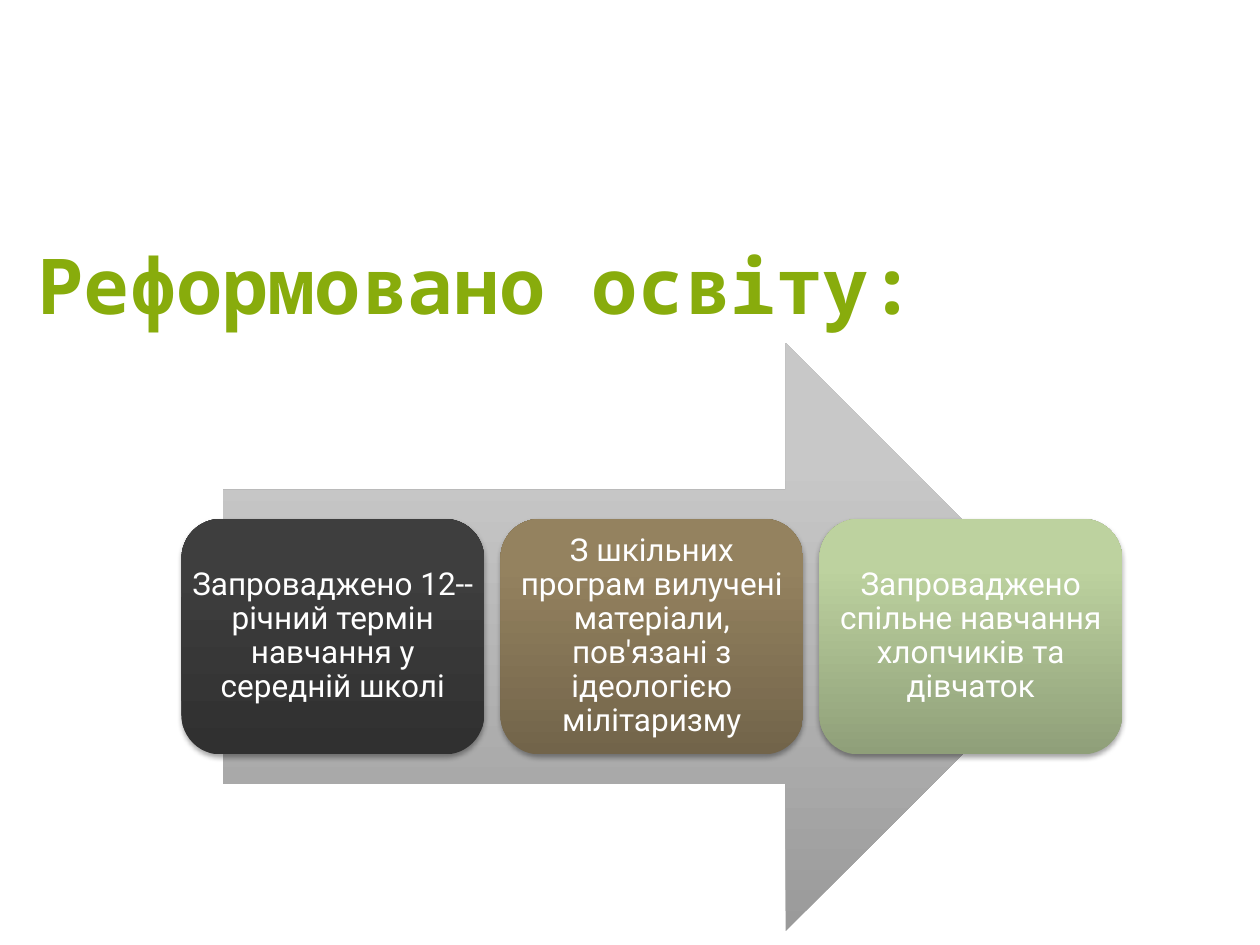
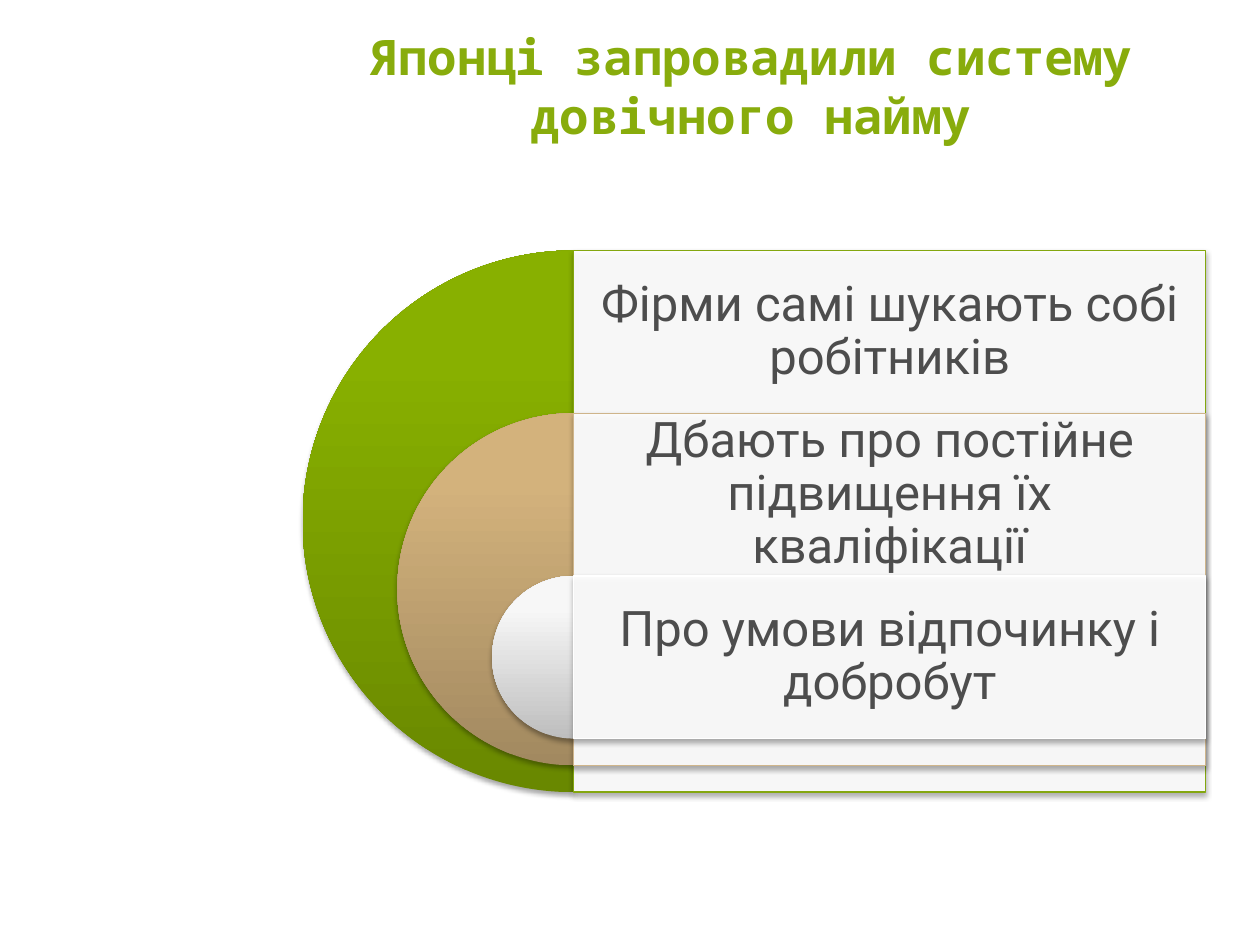
from lxml.etree import SubElement
from pptx import Presentation
from pptx.dml.color import RGBColor
from pptx.enum.shapes import MSO_SHAPE as Preset
from pptx.enum.text import MSO_ANCHOR as Anchor, PP_ALIGN as Align
from pptx.oxml.ns import qn
from pptx.util import Cm, Pt

COLORS = {
    "title": "88AC0C",
    "body": "4D4D4D",
    "white": "FFFFFF",
    "lime": "84A70F",
    "sand": "CFB58B",
}
# Bottom and top colour of each gradient
GRADIENTS = {
    "arrow": ("9A9A9A", "C8C8C8"),
    "charcoal": ("303030", "3E3E3E"),
    "brown": ("72644A", "94825F"),
    "sage": ("8F9F79", "BDD29F"),
    "lime": ("698800", "88B000"),
    "sand": ("A28960", "D3B27C"),
    "white": ("BEBEBE", "F7F7F7"),
}
TITLE_FONT, BODY_FONT = "Noto Sans Mono", "Roboto"


def rgb(name):
    return RGBColor.from_string(COLORS[name])


class Deck:
    def __init__(self):
        self.presentation = Presentation()
        self.presentation.slide_width = Cm(25.4)
        self.presentation.slide_height = Cm(19.05)
        self.slide = None

    def add_slide(self):
        layout = self.presentation.slide_layouts[6]
        self.slide = self.presentation.slides.add_slide(layout)

    def text(self, box, wording, size, color, font=BODY_FONT, bold=False,
             align=Align.CENTER, spacing=0.9, inset=0.18):
        shape = self.slide.shapes.add_textbox(*map(Cm, box))
        frame = shape.text_frame
        frame.word_wrap = True
        frame.vertical_anchor = Anchor.MIDDLE
        frame.margin_left = frame.margin_right = Cm(inset)
        frame.margin_top = frame.margin_bottom = Cm(inset)
        paragraph = frame.paragraphs[0]
        paragraph.text = wording
        paragraph.alignment = align
        paragraph.line_spacing = spacing
        paragraph.font.name = font
        paragraph.font.size = Pt(size)
        paragraph.font.bold = bold
        paragraph.font.color.rgb = rgb(color)

    def title(self, box, wording, size, align):
        self.text(box, wording, size, "title", TITLE_FONT, True, align,
                  spacing=1.0, inset=0.25)

    def shape(self, preset, box, shadow=True):
        shape = self.slide.shapes.add_shape(preset, *map(Cm, box))
        shape.shadow.inherit = False
        if shadow:
            effects = shape.element.spPr.find(qn("a:effectLst"))
            outer = SubElement(effects, qn("a:outerShdw"), blurRad=str(Pt(3.1)),
                               dist=str(Pt(1.8)), dir="5400000", rotWithShape="0")
            black = SubElement(outer, qn("a:srgbClr"), val="000000")
            SubElement(black, qn("a:alpha"), val="35000")
        return shape

    def gradient_shape(self, preset, box, gradient, shadow=True):
        """Add a borderless shape that lightens from its bottom up to 80 %."""
        shape = self.shape(preset, box, shadow)
        shape.line.fill.background()
        shape.fill.gradient()
        shape.fill.gradient_angle = 90
        stops = zip(shape.fill.gradient_stops, GRADIENTS[gradient], (0, 0.8))
        for stop, color, position in stops:
            stop.color.rgb = RGBColor.from_string(color)
            stop.position = position
        return shape

    def half_disc(self, box, gradient):
        pie = self.gradient_shape(Preset.PIE, box, gradient)
        pie.adjustments[0] = 54   # 90 degrees
        pie.adjustments[1] = 162  # 270 degrees

    def panel(self, box, border):
        """Add a white rectangle, 90 % opaque, with a thin border."""
        panel = self.shape(Preset.RECTANGLE, box)
        panel.fill.solid()
        panel.fill.fore_color.rgb = rgb("white")
        color = panel.element.spPr.find(qn("a:solidFill"))[0]
        SubElement(color, qn("a:alpha"), val="90000")
        panel.line.color.rgb = rgb(border)
        panel.line.width = Pt(0.75)


def education_slide(deck):
    deck.add_slide()
    deck.title((0.51, 4.72, 20.32, 1.98), "Реформовано освіту:", 44, Align.LEFT)
    deck.gradient_shape(Preset.RIGHT_ARROW, (4.5, 6.91, 17.27, 11.86), "arrow",
                        shadow=False)
    reforms = [
        ("charcoal", "Запроваджено 12--річний термін навчання у середній школі"),
        ("brown", "З шкільних програм вилучені матеріали, пов'язані з "
                  "ідеологією мілітаризму"),
        ("sage", "Запроваджено спільне навчання хлопчиків та дівчаток"),
    ]
    for index, (gradient, wording) in enumerate(reforms):
        box = (3.66 + index * 6.43, 10.46, 6.1, 4.75)
        deck.gradient_shape(Preset.ROUNDED_RECTANGLE, box, gradient)
        deck.text(box, wording, 18, "white")


def employment_slide(deck):
    deck.add_slide()
    deck.title((5.51, 0.74, 19.25, 1.98),
               "Японці запровадили систему довічного найму", 28, Align.CENTER)
    center, top, band, panel_width = 11.56, 5.05, 3.28, 12.75
    duties = [
        ("lime", "Фірми самі шукають собі робітників"),
        ("sand", "Дбають про постійне підвищення їх кваліфікації"),
        ("white", "Про умови відпочинку і добробут"),
    ]
    for index, (color, wording) in enumerate(duties):
        diameter = 10.92 - index * 3.82
        y = top + index * band
        deck.half_disc((center - diameter / 2, y, diameter, diameter), color)
        deck.panel((center, y, panel_width, diameter), color)
        deck.text((center, y, panel_width, band), wording, 28, "body", inset=0.3)


def main():
    deck = Deck()
    education_slide(deck)
    employment_slide(deck)
    deck.presentation.save("out.pptx")


if __name__ == "__main__":
    main()
